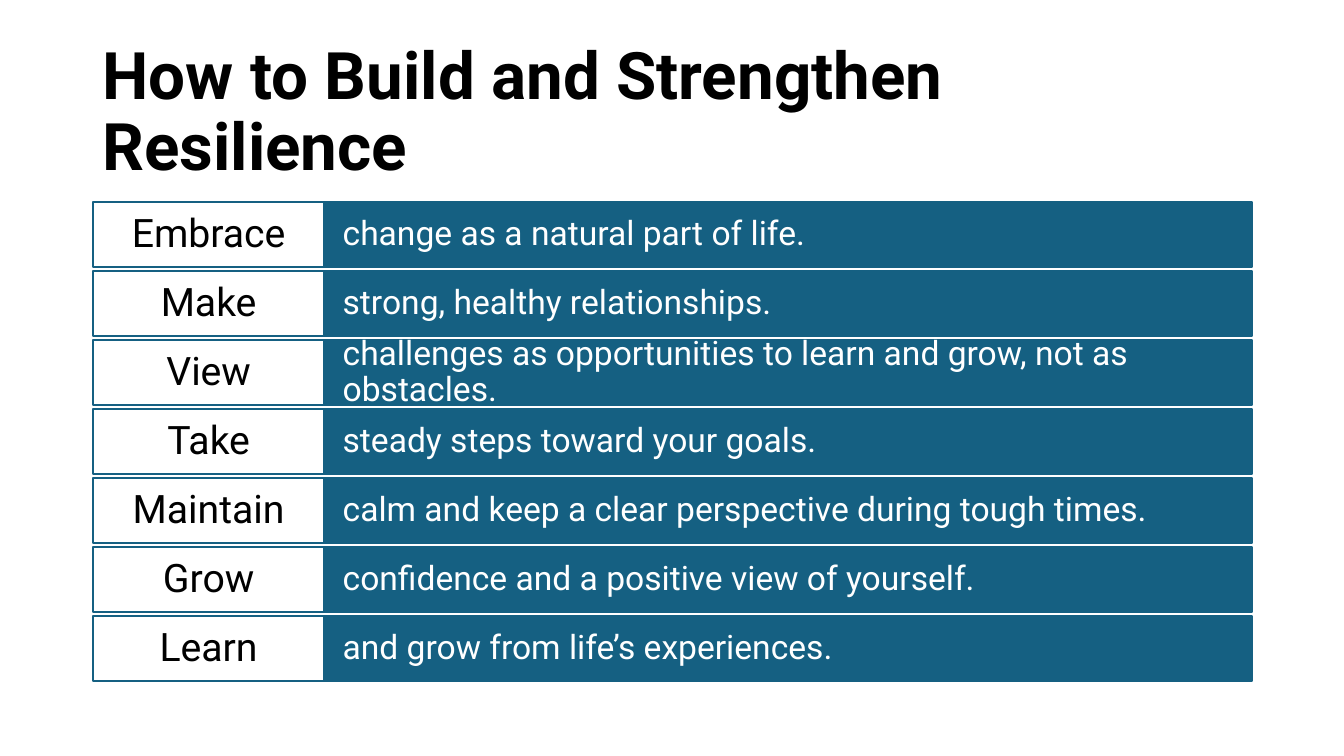
from dataclasses import dataclass

from pptx import Presentation
from pptx.dml.color import RGBColor as RGB
from pptx.enum.shapes import MSO_SHAPE as Preset
from pptx.enum.text import MSO_ANCHOR as Anchor, PP_ALIGN as Align
from pptx.util import Pt

HEADLINE = "How to Build and Strengthen Resilience"
STEPS = [
    ("Embrace", "change as a natural part of life."),
    ("Make", "strong, healthy relationships."),
    ("View", "challenges as opportunities to learn and grow, not as obstacles."),
    ("Take", "steady steps toward your goals."),
    ("Maintain", "calm and keep a clear perspective during tough times."),
    ("Grow", "confidence and a positive view of yourself."),
    ("Learn", "and grow from life’s experiences."),
]


@dataclass(frozen=True)
class Theme:
    font: str = "Roboto"
    teal: RGB = RGB(0x15, 0x60, 0x82)
    white: RGB = RGB(0xFF, 0xFF, 0xFF)
    black: RGB = RGB(0, 0, 0)
    headline_size: float = 46.8
    verb_size: float = 28
    advice_size: float = 24
    border: float = 1.5


THEME = Theme()
LEFT, STEPS_TOP = 66.24, 144
VERB_WIDTH, ADVICE_WIDTH = 165.6, 662.4
STEP_HEIGHT, STEP_PITCH = 46.8, 49.32


def apply(target, values):
    for key, value in values.items():
        setattr(target, key, value)


def write(holder, wording, size, colour, align, inset_x, inset_y, bold=False):
    frame = holder.text_frame
    apply(frame, dict(
        word_wrap=True, vertical_anchor=Anchor.MIDDLE,
        margin_left=Pt(inset_x), margin_right=Pt(inset_x),
        margin_top=Pt(inset_y), margin_bottom=Pt(inset_y)))
    line = frame.paragraphs[0]
    apply(line, dict(text=wording, alignment=align, line_spacing=0.9))
    font = line.runs[0].font
    apply(font, dict(name=THEME.font, size=Pt(size), bold=bold))
    font.color.rgb = colour


def add_cell(slide, left, top, width, fill):
    cell = slide.shapes.add_shape(
        Preset.RECTANGLE, Pt(left), Pt(top), Pt(width), Pt(STEP_HEIGHT))
    cell.shadow.inherit = False
    cell.fill.solid()
    cell.fill.fore_color.rgb = fill
    cell.line.color.rgb = THEME.teal
    cell.line.width = Pt(THEME.border)
    return cell


def main():
    deck = Presentation()
    apply(deck, dict(slide_width=Pt(960), slide_height=Pt(540)))
    slide = deck.slides.add_slide(deck.slide_layouts[6])

    headline = slide.shapes.add_textbox(
        Pt(LEFT), Pt(28.8), Pt(VERB_WIDTH + ADVICE_WIDTH), Pt(104.4))
    write(headline, HEADLINE, THEME.headline_size, THEME.black,
          Align.LEFT, 7.2, 3.6, bold=True)

    for row, (verb, advice) in enumerate(STEPS):
        top = STEPS_TOP + row * STEP_PITCH
        advice_cell = add_cell(
            slide, LEFT + VERB_WIDTH, top, ADVICE_WIDTH, THEME.teal)
        write(advice_cell, advice, THEME.advice_size, THEME.white,
              Align.LEFT, 12.96, 11.52)
        verb_cell = add_cell(slide, LEFT, top, VERB_WIDTH, THEME.white)
        write(verb_cell, verb, THEME.verb_size, THEME.black,
              Align.CENTER, 8.64, 4.32)

    deck.save("out.pptx")


if __name__ == "__main__":
    main()
